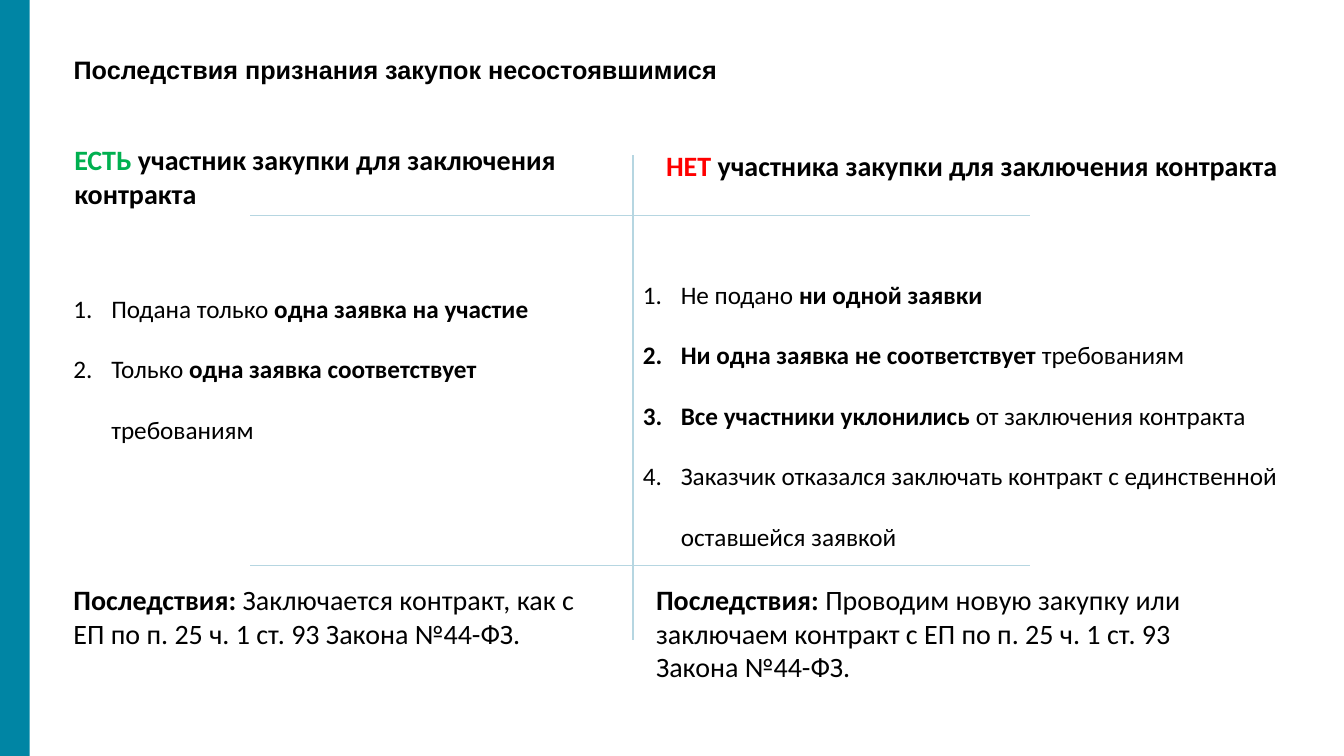
from lxml import etree
from pptx import Presentation
from pptx import util as u
from pptx.dml.color import RGBColor
from pptx.enum import shapes, text
from pptx.oxml.ns import qn

Pt = u.Pt
TEAL, PALE, BLACK, GREEN, RED = "0085A4", "B6D6E1", "000000", "00B050", "FF0000"
W, H = 960, 540


def rgb(value):
    return RGBColor.from_string(value)


def add_run(p, content, size=18, font="Calibri", color=BLACK, bold=False):
    r = p.add_run()
    r.text = content
    r.font.size, r.font.name, r.font.bold = Pt(size), font, bold
    r.font.color.rgb = rgb(color)


def add_box(s, box):
    tf = s.shapes.add_textbox(*map(Pt, box)).text_frame
    tf.word_wrap = True
    return tf


def add_line(s, x1, y1, x2, y2):
    c = s.shapes.add_connector(shapes.MSO_CONNECTOR.STRAIGHT, Pt(x1), Pt(y1), Pt(x2), Pt(y2))
    c.line.color.rgb = rgb(PALE)
    c.line.width = Pt(1)
    etree.SubElement(c._element.spPr, qn("a:effectLst"))


def number(p, indent=27):
    pPr = p._p.get_or_add_pPr()
    pPr.set("marL", str(Pt(indent)))
    pPr.set("indent", str(-Pt(indent)))
    etree.SubElement(pPr, qn("a:buFont"), typeface="+mj-lt")
    etree.SubElement(pPr, qn("a:buAutoNum"), type="arabicPeriod")


def title(s, box, content):
    sp = s.shapes.title
    sp.left, sp.top, sp.width, sp.height = map(Pt, box)
    tf = sp.text_frame
    tf.word_wrap = True
    tf.auto_size = text.MSO_AUTO_SIZE.NONE
    tf.vertical_anchor = text.MSO_ANCHOR.TOP
    p = tf.paragraphs[0]
    p.alignment = text.PP_ALIGN.LEFT
    add_run(p, content, font="Arial", bold=True)


def side_bar(s, box):
    sp = s.shapes.add_shape(shapes.MSO_SHAPE.RECTANGLE, *map(Pt, box))
    sp.shadow.inherit = False
    sp.fill.solid()
    sp.fill.fore_color.rgb = rgb(TEAL)
    sp.line.fill.background()


def dividers(s, box):
    x, y, w, h = box
    add_line(s, x + 273.6, y, x + 273.6, y + h)
    for dy in (43.2, 293):
        add_line(s, x, y + dy, x + w, y + dy)


def heading(s, box, word, color, rest):
    p = add_box(s, box).paragraphs[0]
    add_run(p, word, size=20, color=color, bold=True)
    add_run(p, rest, size=20, bold=True)


def reasons(s, box, items):
    tf = add_box(s, box)
    for i, item in enumerate(items):
        p = tf.add_paragraph() if i else tf.paragraphs[0]
        p.line_spacing = 2.0
        number(p)
        for content, bold in item:
            add_run(p, content, bold=bold)


def outcome(s, box, content):
    p = add_box(s, box).paragraphs[0]
    add_run(p, "Последствия: ", size=20, bold=True)
    add_run(p, content, size=20)


def main():
    prs = Presentation()
    prs.slide_width, prs.slide_height = Pt(W), Pt(H)
    s = prs.slides.add_slide(prs.slide_layouts[5])

    # Frame
    side_bar(s, (0, 0, 21.2, H))
    title(s, (45.4, 35.3, 579, 32.4), "Последствия признания закупок несостоявшимися")
    dividers(s, (178.6, 110.9, 557.3, 346.3))

    # Left: a supplier is available
    heading(s, (46, 98.6, 396.7, 55.4), "ЕСТЬ", GREEN,
            " участник закупки для заключения контракта")
    reasons(s, (45.4, 184.3, 381.6, 131.8), [
        [("Подана только ", False), ("одна заявка на участие", True)],
        [("Только ", False), ("одна заявка соответствует ", True), ("требованиям", False)],
    ])
    outcome(s, (45.4, 412.6, 381.6, 55.4),
            "Заключается контракт, как с ЕП по п. 25 ч. 1 ст. 93 Закона №44-ФЗ.")

    # Right: no supplier
    heading(s, (468.7, 102.2, 480.2, 31.7), "НЕТ", RED,
            " участника закупки для заключения контракта")
    reasons(s, (452.2, 174.2, 496.8, 219.6), [
        [("Не подано ", False), ("ни одной заявки", True)],
        [("Ни одна заявка не соответствует", True), (" требованиям", False)],
        [("Все участники уклонились", True), (" от заключения контракта", False)],
        [("Заказчик отказался заключать контракт с единственной оставшейся заявкой", False)],
    ])
    outcome(s, (461.5, 412.6, 438.5, 79.9),
            "Проводим новую закупку или заключаем контракт с ЕП по п. 25 ч. 1 ст. 93 Закона №44-ФЗ.")

    prs.save("out.pptx")


if __name__ == "__main__":
    main()
